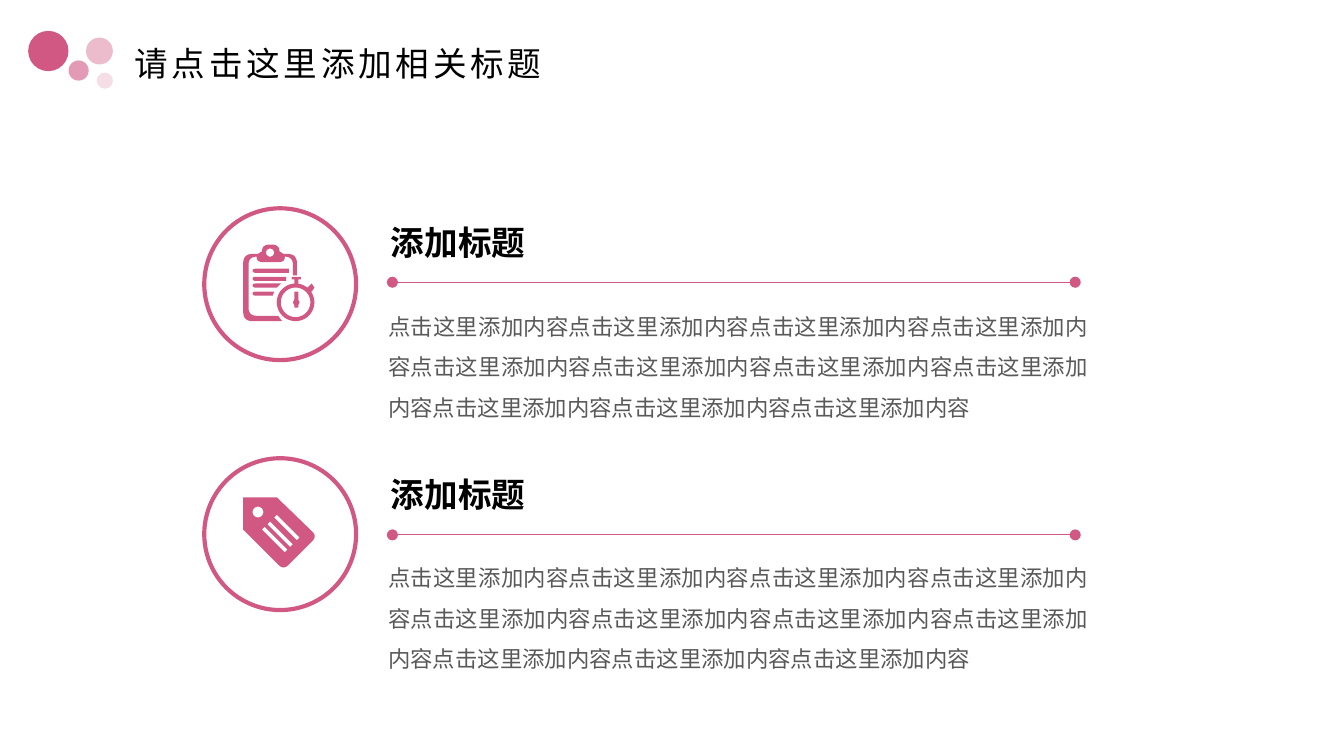
from dataclasses import dataclass
from math import cos, hypot, pi, sin

from lxml import etree
from pptx import Presentation
from pptx.dml.color import RGBColor
from pptx.enum.shapes import MSO_CONNECTOR, MSO_SHAPE
from pptx.enum.text import MSO_ANCHOR, MSO_AUTO_SIZE, PP_ALIGN
from pptx.oxml.ns import qn
from pptx.util import Inches, Pt

PINK, BLACK, GRAY = "D05883", "000000", "595959"
SANS, CJK = "Calibri", "Noto Sans CJK SC"
Path = list[tuple[float, float]]


@dataclass
class Dot:
    left: float
    top: float
    size: float
    color: str


@dataclass
class Item:
    ring: float  # top of the ring
    rule: float  # height of the rule
    text: float  # top of the body text
    head: str
    body: str
    icon: list[Path]


def rgb(code: str) -> RGBColor:
    return RGBColor.from_string(code)


# Outlines for the icons, in inches
def disc(x: float, y: float, r: float) -> Path:
    turns = [2 * pi * i / 48 for i in range(48)]
    return [(x + r * cos(t), y + r * sin(t)) for t in turns]


def outline(*corners: tuple) -> Path:
    """Closed path of (x, y) or (x, y, radius) corners."""
    path = []
    for i, (x, y, *rest) in enumerate(corners):
        if not rest:
            path.append((x, y))
            continue
        ends = []
        for px, py, *_ in (corners[i - 1], corners[(i + 1) % len(corners)]):
            span = hypot(px - x, py - y)
            part = min(rest[0] / span, 1)
            ends.append((x + (px - x) * part, y + (py - y) * part))
        (ax, ay), (bx, by) = ends
        for t in (k / 8 for k in range(9)):
            a, m, b = (1 - t) ** 2, 2 * t * (1 - t), t * t
            path.append((a * ax + m * x + b * bx, a * ay + m * y + b * by))
    return path


def bar(top: float, right: float, low: float, r: float = 0.02) -> Path:
    """Text line on the clipboard; low is the lower right end."""
    base = top + 0.03
    return outline((1.88, top, r), (right, top), (low, base), (1.88, base, r))


def slit(x: float, y: float) -> Path:
    """Slanted line on the tag."""
    return outline((x, y), (x + 0.17, y + 0.17),
                   (x + 0.19, y + 0.15), (x + 0.02, y - 0.02))


CLIP = [
    # Board, then clamp with the right edge
    outline((1.92, 1.89), (1.91, 1.91), (1.85, 1.91, 0.06), (1.85, 2.35, 0.06),
            (2.07, 2.35), (2.1, 2.39), (1.81, 2.39, 0.07), (1.81, 1.89, 0.07)),
    outline((1.92, 1.89), (1.91, 1.91), (1.91, 1.95, 0.04), (2.12, 1.95, 0.04),
            (2.12, 1.91), (2.18, 1.91, 0.06), (2.18, 2.05), (2.21, 2.05),
            (2.21, 1.89, 0.07), (2.11, 1.89), (2.08, 1.87),
            (2.08, 1.82, 0.06), (1.95, 1.82, 0.06), (1.95, 1.87)),
    disc(2.01, 1.88, 0.03),
    bar(2, 2.15, 2.15), bar(2.06, 2.13, 2.13),
    bar(2.11, 2.09, 2.06), bar(2.17, 2.04, 2.03),
    # Stopwatch: face, crown, knob, hand
    disc(2.2, 2.25, 0.14), disc(2.2, 2.25, 0.11),
    outline((2.19, 2.11), (2.19, 2.08), (2.17, 2.08), (2.17, 2.06),
            (2.24, 2.06), (2.24, 2.08), (2.22, 2.08), (2.22, 2.11)),
    outline((2.29, 2.14), (2.32, 2.11), (2.34, 2.14), (2.32, 2.17)),
    outline((2.19, 2.17), (2.22, 2.17), (2.22, 2.23), (2.23, 2.25),
            (2.22, 2.27), (2.22, 2.29), (2.19, 2.29), (2.19, 2.27),
            (2.18, 2.25), (2.19, 2.23)),
]
TAG = [
    outline((1.81, 3.7), (2.06, 3.7), (2.36, 3.99, 0.05),
            (2.11, 4.24, 0.05), (1.81, 3.94)),
    disc(1.92, 3.81, 0.04),
    slit(1.95, 3.94), slit(1.99, 3.9), slit(2.04, 3.85),
]

BODY = "点击这里添加内容" * 11
DOTS = [
    Dot(0.21, 0.23, 0.3, PINK),
    Dot(0.51, 0.45, 0.15, "E39BB5"),
    Dot(0.64, 0.28, 0.2, "ECBCCD"),
    Dot(0.72, 0.54, 0.12, "F6DEE6"),
]
ITEMS = [
    Item(1.55, 2.1, 2.18, "添加标题", BODY, CLIP),
    Item(3.41, 3.98, 4.05, "添加标题", BODY, TAG),
]


def write(para, text: str, size: float, font: str, color: str, bold=False):
    run = para.add_run()
    run.text = text
    run.font.size, run.font.name, run.font.bold = Pt(size), font, bold
    run.font.color.rgb = rgb(color)
    props = run.font._element
    etree.SubElement(props, qn("a:ea")).set("typeface", font)
    return props


def draw_disc(shapes, left: float, top: float, size: float):
    shape = shapes.add_shape(MSO_SHAPE.OVAL, Inches(left), Inches(top),
                             Inches(size), Inches(size))
    shape.shadow.inherit = False
    return shape


def draw_dot(shapes, dot: Dot) -> None:
    shape = draw_disc(shapes, dot.left, dot.top, dot.size)
    shape.fill.solid()
    shape.fill.fore_color.rgb = rgb(dot.color)
    shape.line.fill.background()


def draw_rule(shapes, y: float) -> None:
    rule = shapes.add_connector(MSO_CONNECTOR.STRAIGHT, Inches(2.92),
                                Inches(y), Inches(8), Inches(y))
    rule.line.color.rgb = rgb(PINK)
    rule.line.width = Pt(0.5)
    for end in ("a:headEnd", "a:tailEnd"):
        etree.SubElement(rule.line._get_or_add_ln(), qn(end)).set("type", "oval")
    etree.SubElement(rule._element.spPr, qn("a:effectLst"))


def draw_icon(shapes, paths: list[Path]) -> None:
    pen = None
    for path in paths:
        first, *rest = [(Inches(x), Inches(y)) for x, y in path]
        if pen is None:
            pen = shapes.build_freeform(*first, scale=1.0)
        else:
            pen.move_to(*first)
        pen.add_line_segments(rest, close=True)
    icon = pen.convert_to_shape()
    icon.shadow.inherit = False
    icon.fill.solid()
    icon.fill.fore_color.rgb = rgb(PINK)
    icon.line.fill.background()


def draw_item(shapes, item: Item) -> None:
    draw_rule(shapes, item.rule)
    # Heading
    head = shapes.add_shape(MSO_SHAPE.ROUNDED_RECTANGLE, Inches(2.81),
                            Inches(item.rule - 0.52), Inches(2.75), Inches(0.44))
    head.adjustments[0] = 0
    head.shadow.inherit = False
    head.fill.background()
    head.line.fill.background()
    head.text_frame.vertical_anchor = MSO_ANCHOR.MIDDLE
    para = head.text_frame.paragraphs[0]
    para.alignment = PP_ALIGN.LEFT
    write(para, item.head, 18, SANS, BLACK, True)
    # Body text
    box = shapes.add_textbox(Inches(2.79), Inches(item.text),
                             Inches(5.41), Inches(1.05))
    box.text_frame.word_wrap = True
    para = box.text_frame.paragraphs[0]
    para.alignment = PP_ALIGN.JUSTIFY
    para.line_spacing, para.space_after = 1.5, Pt(6)
    write(para, item.body, 12, SANS, GRAY)
    # Ring and icon
    ring = draw_disc(shapes, 1.52, item.ring, 1.13)
    ring.fill.background()
    ring.line.color.rgb = rgb(PINK)
    ring.line.width = Pt(2.25)
    draw_icon(shapes, item.icon)


def draw_title(title, text: str) -> None:
    title.left, title.top = Inches(0.9), Inches(0.19)
    title.width, title.height = Inches(8.62), Inches(0.59)
    frame = title.text_frame
    frame.auto_size = MSO_AUTO_SIZE.NONE
    frame.vertical_anchor = MSO_ANCHOR.MIDDLE
    para = frame.paragraphs[0]
    para.alignment, para.line_spacing = PP_ALIGN.LEFT, 0.9
    write(para, text, 18, CJK, BLACK).set("spc", "200")


def main() -> None:
    deck = Presentation()
    # Widescreen, 16:9
    deck.slide_width = Inches(10)
    deck.slide_height = Inches(10) * 9 // 16
    shapes = deck.slides.add_slide(deck.slide_layouts[5]).shapes
    draw_title(shapes.title, "请点击这里添加相关标题")
    for dot in DOTS:
        draw_dot(shapes, dot)
    for item in ITEMS:
        draw_item(shapes, item)
    deck.save("out.pptx")


if __name__ == "__main__":
    main()
